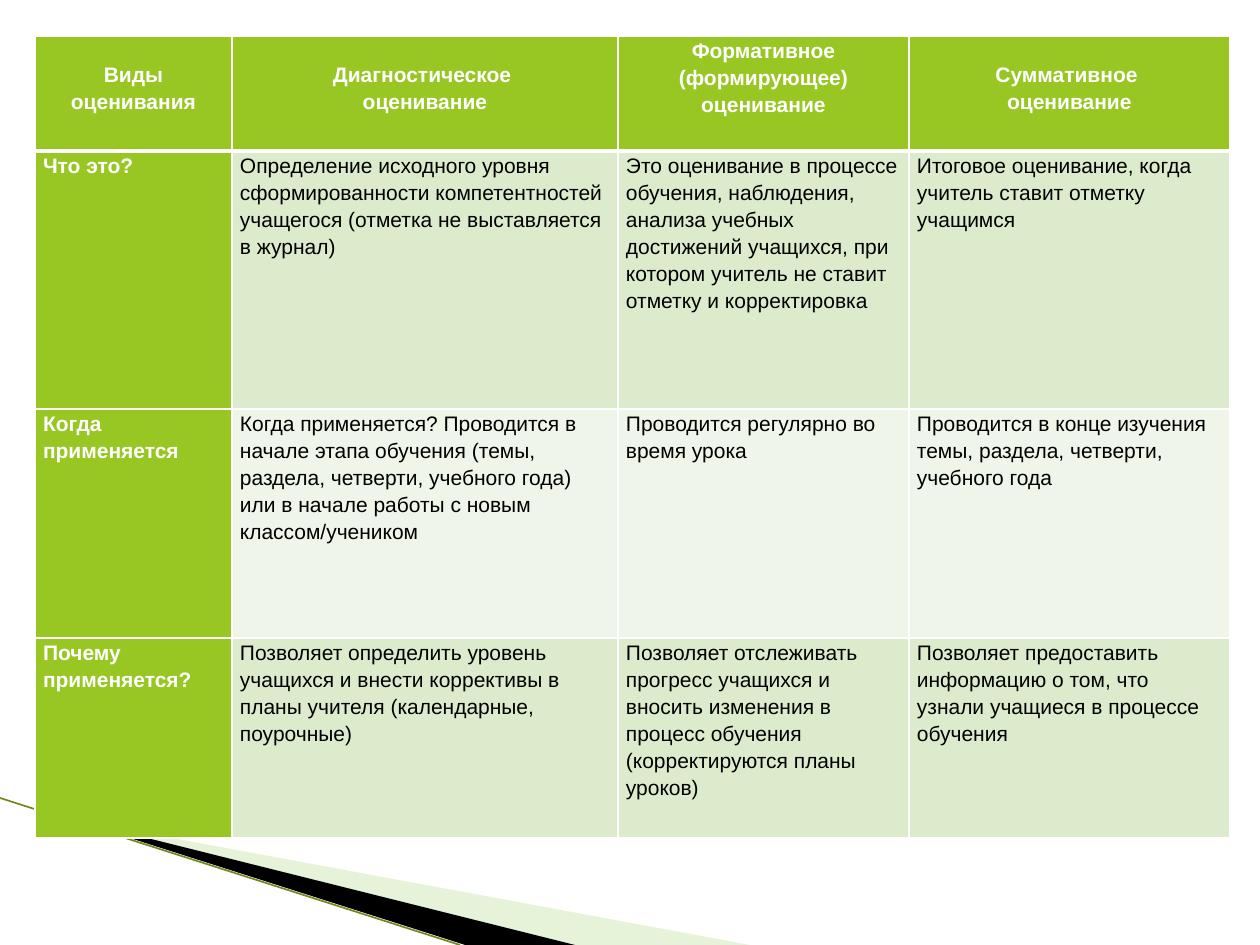
import dataclasses

import lxml.etree
import pptx
import pptx.dml.color
import pptx.enum.shapes
import pptx.enum.text
import pptx.oxml.ns
import pptx.util

PX = 914400 / 126  # EMU in one px
SLIDE_BOX = (0, 0, 1260, 945)
TABLE_BOX = (35, 36, 1195, 802)
COLUMNS = (197, 386, 291, 321)
ROWS = (115, 258, 229, 200)
HEADER_DROP = 24  # space above a two-line heading


@dataclasses.dataclass(frozen=True)
class Theme:
    font: str = "Arial"
    size: int = 12
    line_spacing: float = 1.15
    white: str = "FFFFFF"
    black: str = "000000"
    green: str = "98C723"
    bands: tuple = ("DDEBCD", "EFF5E8")
    ray: str = "C5E19F"
    ray_alpha: int = 40
    olive: str = "6F8A1A"


THEME = Theme()

HEADINGS = (
    ("Виды оценивания",),
    ("Диагностическое ", "оценивание"),
    ("Формативное (формирующее) оценивание",),
    ("Суммативное ", "оценивание"),
)
BODY = (
    ("Что это?",
     "Определение исходного уровня сформированности компетентностей "
     "учащегося (отметка не выставляется в журнал)",
     "Это оценивание в процессе обучения, наблюдения, анализа учебных "
     "достижений учащихся, при котором учитель не ставит отметку и корректировка",
     "Итоговое оценивание, когда учитель ставит отметку учащимся"),
    ("Когда применяется",
     "Когда применяется? Проводится в начале этапа обучения (темы, раздела, "
     "четверти, учебного года) или в начале работы с новым классом/учеником",
     "Проводится регулярно во время урока",
     "Проводится в конце изучения темы, раздела, четверти, учебного года"),
    ("Почему применяется?",
     "Позволяет определить уровень учащихся и внести коррективы в планы "
     "учителя (календарные, поурочные)",
     "Позволяет отслеживать прогресс учащихся и вносить изменения в процесс "
     "обучения (корректируются планы уроков)",
     "Позволяет предоставить информацию о том, что узнали учащиеся в "
     "процессе обучения"),
)


def emu(px):
    return pptx.util.Emu(round(px * PX))


def rgb(value):
    return pptx.dml.color.RGBColor.from_string(value)


def set_attrs(obj, values):
    for name, value in values.items():
        setattr(obj, name, value)


def sub(parent, tag, **attrs):
    return lxml.etree.SubElement(parent, pptx.oxml.ns.qn(tag), attrs)


def add_ray(slide, box, points, color, alpha=None):
    """Filled outline whose points are relative to the box."""
    left, top = box[:2]
    (x, y), *rest = [(left + px, top + py) for px, py in points]
    builder = slide.shapes.build_freeform(x, y, scale=PX)
    builder.add_line_segments(rest, close=True)
    sp = builder.convert_to_shape()
    sp.shadow.inherit = False
    sp.line.fill.background()
    sp.fill.solid()
    sp.fill.fore_color.rgb = rgb(color)
    if alpha is not None:
        clr = sp.fill._xPr.find(".//" + pptx.oxml.ns.qn("a:srgbClr"))
        sub(clr, "a:alpha", val=str(alpha * 1000))


def add_decoration(slide, box):
    """Rays in the lower left corner."""
    left, top, _, height = box
    add_ray(slide, box, ((69, 819), (750, height), (575, height)),
            THEME.ray, THEME.ray_alpha)
    add_ray(slide, box, ((67, 818), (575, height), (465, height)), THEME.black)
    line = slide.shapes.add_connector(
        pptx.enum.shapes.MSO_CONNECTOR.STRAIGHT,
        emu(left), emu(top + 798), emu(left + 460), emu(top + height))
    line.line.color.rgb = rgb(THEME.olive)
    line.line.width = pptx.util.Pt(0.95)
    sub(line._element.spPr, "a:effectLst")


def set_borders(cell, widths):
    """White borders, with widths in points by side."""
    tc_pr = cell._tc.get_or_add_tcPr()
    for side in "LRTB":
        ln = sub(tc_pr, "a:ln" + side, w=str(pptx.util.Pt(widths.get(side, 1))))
        sub(sub(ln, "a:solidFill"), "a:srgbClr", val=THEME.white)


def fill_cell(cell, lines, fill, strong, centred, drop, borders):
    set_borders(cell, borders)
    cell.fill.solid()
    cell.fill.fore_color.rgb = rgb(fill)
    set_attrs(cell, {"margin_left": emu(8), "margin_right": emu(8),
                     "margin_top": emu(drop), "margin_bottom": 0})
    align = pptx.enum.text.PP_ALIGN
    tf = cell.text_frame
    for i, text in enumerate(lines):
        p = tf.paragraphs[0] if i == 0 else tf.add_paragraph()
        set_attrs(p, {"alignment": align.CENTER if centred else align.LEFT,
                      "line_spacing": THEME.line_spacing})
        r = p.add_run()
        r.text = text
        set_attrs(r.font, {"name": THEME.font, "bold": strong,
                           "size": pptx.util.Pt(THEME.size)})
        r.font.color.rgb = rgb(THEME.white if strong else THEME.black)


def add_assessment_table(slide, box):
    rows = [HEADINGS] + [[(text,) for text in row] for row in BODY]
    table = slide.shapes.add_table(len(ROWS), len(COLUMNS), *map(emu, box)).table
    set_attrs(table, {"first_row": True, "first_col": True, "horz_banding": False})
    for column, width in zip(table.columns, COLUMNS):
        column.width = emu(width)
    for row, height in zip(table.rows, ROWS):
        row.height = emu(height)
    for i, row in enumerate(rows):
        borders = {0: {"B": 3}, 1: {"T": 3}}.get(i, {})
        for j, lines in enumerate(row):
            header = i == 0
            strong = header or j == 0
            fill = THEME.green if strong else THEME.bands[(i - 1) % 2]
            # The three-line heading starts at the top of its cell
            drop = HEADER_DROP if header and j != 2 else 0
            fill_cell(table.cell(i, j), lines, fill, strong, header, drop, borders)


def main():
    prs = pptx.Presentation()
    set_attrs(prs, {"slide_width": emu(SLIDE_BOX[2]),
                    "slide_height": emu(SLIDE_BOX[3])})
    slide = prs.slides.add_slide(prs.slide_layouts[6])
    add_decoration(slide, SLIDE_BOX)
    add_assessment_table(slide, TABLE_BOX)
    prs.save("out.pptx")


if __name__ == "__main__":
    main()
